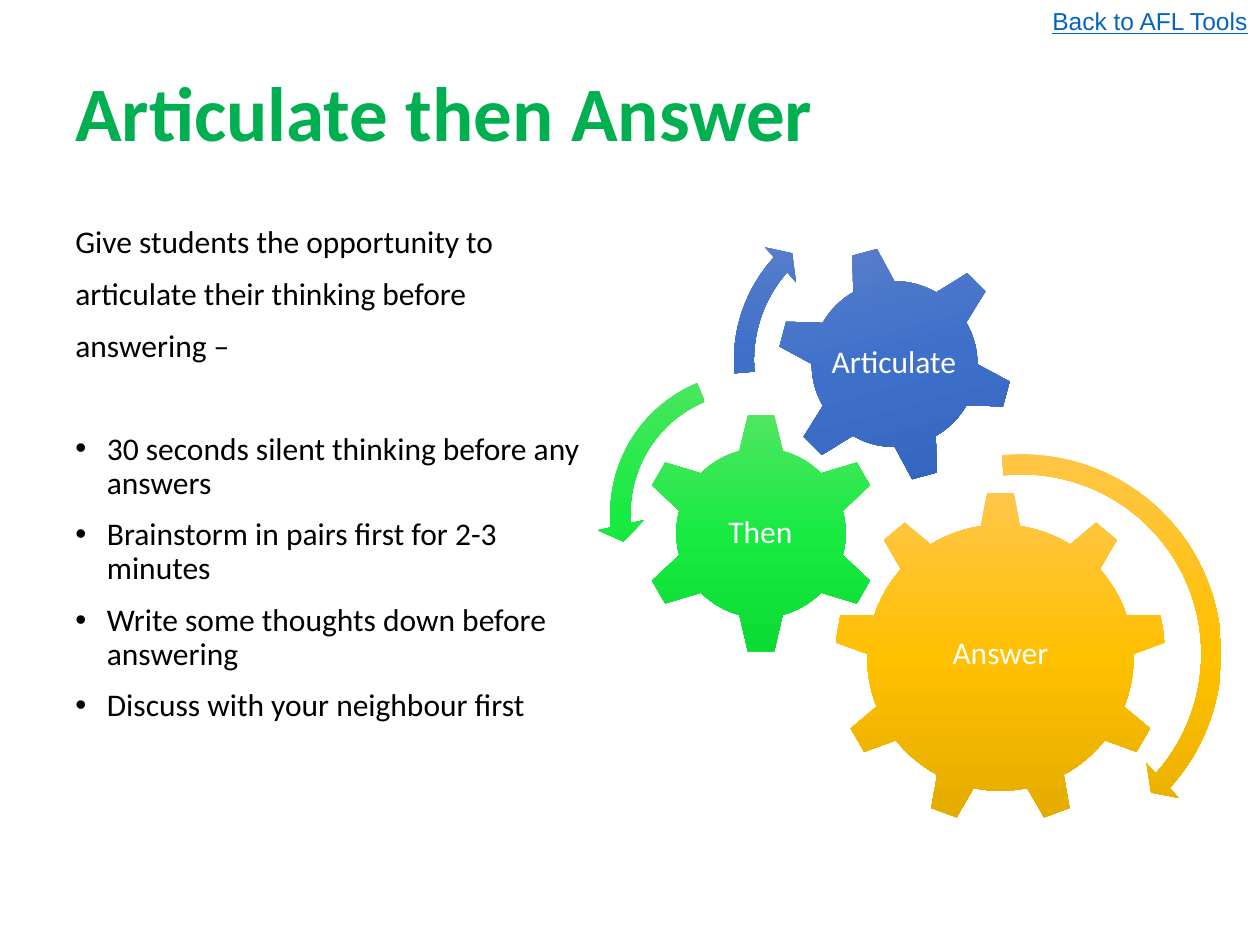
from copy import deepcopy
from dataclasses import dataclass

from lxml import etree
from pptx import Presentation
from pptx import util as u
from pptx.dml.color import RGBColor
from pptx.enum import shapes, text
from pptx.oxml.ns import qn

COLOURS = {
    "heading": "00B050",
    "body": "000000",
    "link": "0563C1",
    "label": "FFFFFF",
}
GRADIENTS = {
    "gold": ("FFC64B", "FFC000", "E3AB00"),
    "green": ("51E663", "19EA42", "0CDB34"),
    "blue": ("6183CB", "3E70CA", "3062BB"),
}
HEADING_FONT = {"name": "Calibri", "size": u.Pt(44), "bold": True}
BODY_FONT = {"name": "Calibri", "size": u.Pt(18)}
LINK_FONT = {"name": "Arial", "size": u.Pt(14), "underline": True}
TIGHT = {"line_spacing": 0.9}
SPACED = {**TIGHT, "space_before": u.Pt(10)}
AFTER_GAP = {**TIGHT, "space_before": u.Pt(39.5)}
CENTRED = {**TIGHT, "alignment": text.PP_ALIGN.CENTER}
RIGHT = {"alignment": text.PP_ALIGN.RIGHT}
MIDDLE = {"word_wrap": True, "vertical_anchor": text.MSO_ANCHOR.MIDDLE}
TOP = {"word_wrap": True, "vertical_anchor": text.MSO_ANCHOR.TOP}
LABEL_FRAME = {
    **MIDDLE,
    **{f"margin_{side}": u.Inches(0.03) for side in ("left", "top", "right", "bottom")},
}

INTRO = (
    "Give students the opportunity to",
    "articulate their thinking before",
    "answering –",
)
STRATEGIES = (
    "30 seconds silent thinking before any answers",
    "Brainstorm in pairs first for 2-3 minutes",
    "Write some thoughts down before answering",
    "Discuss with your neighbour first",
)


@dataclass(frozen=True)
class Box:
    left: float
    top: float
    width: float
    height: float

    def lengths(self) -> list:
        return [u.Inches(n) for n in (self.left, self.top, self.width, self.height)]


@dataclass(frozen=True)
class Line:
    words: str
    layout: dict
    font: dict
    colour: str
    bullet: bool = False


@dataclass(frozen=True)
class Gear:
    word: str
    preset: shapes.MSO_SHAPE
    box: Box
    label_box: Box
    gradient: str
    rotation: float = 0


@dataclass(frozen=True)
class Sweep:
    preset: shapes.MSO_SHAPE
    box: Box
    gradient: str
    thickness_percent: float
    angles: tuple[float, float, float]
    head_percent: float


GEARS = (
    Gear("Answer", shapes.MSO_SHAPE.GEAR_9, Box(6.62, 3.9, 2.64, 2.64),
         Box(7.15, 4.51, 1.58, 1.36), "gold"),
    Gear("Then", shapes.MSO_SHAPE.GEAR_6, Box(5.08, 3.27, 1.92, 1.92),
         Box(5.56, 3.76, 0.95, 0.95), "green"),
    Gear("Articulate", shapes.MSO_SHAPE.GEAR_6, Box(6.16, 1.95, 1.88, 1.88),
         Box(6.57, 2.36, 1.05, 1.05), "blue", 345),
)
SWEEPS = (
    Sweep(shapes.MSO_SHAPE.CIRCULAR_ARROW, Box(6.42, 3.5, 3.38, 3.38), "gold",
          4.7, (4.98, 42.01, 264.2), 5.5),
    Sweep(shapes.MSO_SHAPE.LEFT_CIRCULAR_ARROW, Box(4.74, 2.85, 2.45, 2.45), "green",
          6.5, (7.17, 174.82, 247.3), 7.5),
    Sweep(shapes.MSO_SHAPE.CIRCULAR_ARROW, Box(5.72, 1.54, 2.64, 2.64), "blue",
          6, (6.57, 221.9, 175.14), 7),
)


def apply_format(target, values: dict) -> None:
    for attribute, value in values.items():
        setattr(target, attribute, value)


def add_bullet(paragraph) -> None:
    properties = paragraph._p.get_or_add_pPr()
    properties.set("marL", str(u.Inches(0.25)))
    properties.set("indent", str(-u.Inches(0.25)))
    etree.SubElement(properties, qn("a:buFont")).set("typeface", "Arial")
    etree.SubElement(properties, qn("a:buChar")).set("char", "•")


def add_lines(slide, box: Box, frame_format: dict, lines: list[Line]) -> None:
    frame = slide.shapes.add_textbox(*box.lengths()).text_frame
    apply_format(frame, frame_format)
    for index, line in enumerate(lines):
        paragraph = frame.add_paragraph() if index else frame.paragraphs[0]
        apply_format(paragraph, line.layout)
        if line.bullet:
            add_bullet(paragraph)
        run = paragraph.add_run()
        run.text = line.words
        apply_format(run.font, line.font)
        run.font.color.rgb = RGBColor.from_string(COLOURS[line.colour])


def add_gradient_shape(slide, preset: shapes.MSO_SHAPE, box: Box, gradient: str):
    shape = slide.shapes.add_shape(preset, *box.lengths())
    shape.shadow.inherit = False
    shape.line.fill.background()
    shape.fill.gradient()
    shape.fill.gradient_angle = 270
    stop_list = shape._element.spPr.find(qn("a:gradFill")).find(qn("a:gsLst"))
    stop_list.append(deepcopy(stop_list[-1]))
    for index, (stop, colour) in enumerate(zip(shape.fill.gradient_stops, GRADIENTS[gradient])):
        stop.position = index / 2
        stop.color.rgb = RGBColor.from_string(colour)
    return shape


def add_gear(slide, gear: Gear) -> None:
    wheel = add_gradient_shape(slide, gear.preset, gear.box, gear.gradient)
    wheel.rotation = gear.rotation
    add_lines(slide, gear.label_box, LABEL_FRAME,
              [Line(gear.word, CENTRED, BODY_FONT, "label")])


def add_sweep(slide, sweep: Sweep) -> None:
    arrow = add_gradient_shape(slide, sweep.preset, sweep.box, sweep.gradient)
    values = (
        sweep.thickness_percent / 100,
        *(angle * 0.6 for angle in sweep.angles),
        sweep.head_percent / 100,
    )
    for index, value in enumerate(values):
        arrow.adjustments[index] = value


def main() -> None:
    deck = Presentation()
    deck.slide_width, deck.slide_height = u.Inches(10), u.Inches(7.5)
    slide = deck.slides.add_slide(deck.slide_layouts[6])

    add_lines(slide, Box(0.5, 0.3, 9, 1.25), MIDDLE,
              [Line("Articulate then Answer", TIGHT, HEADING_FONT, "heading")])
    intro = [Line(words, SPACED, BODY_FONT, "body") for words in INTRO]
    strategies = [
        Line(words, SPACED if index else AFTER_GAP, BODY_FONT, "body", bullet=True)
        for index, words in enumerate(STRATEGIES)
    ]
    add_lines(slide, Box(0.5, 1.75, 4.42, 4.95), TOP, intro + strategies)
    add_lines(slide, Box(7.97, 0, 2.03, 0.34), TOP,
              [Line("Back to AFL Tools", RIGHT, LINK_FONT, "link")])

    for gear in GEARS:
        add_gear(slide, gear)
    for sweep in SWEEPS:
        add_sweep(slide, sweep)
    deck.save("out.pptx")


if __name__ == "__main__":
    main()
